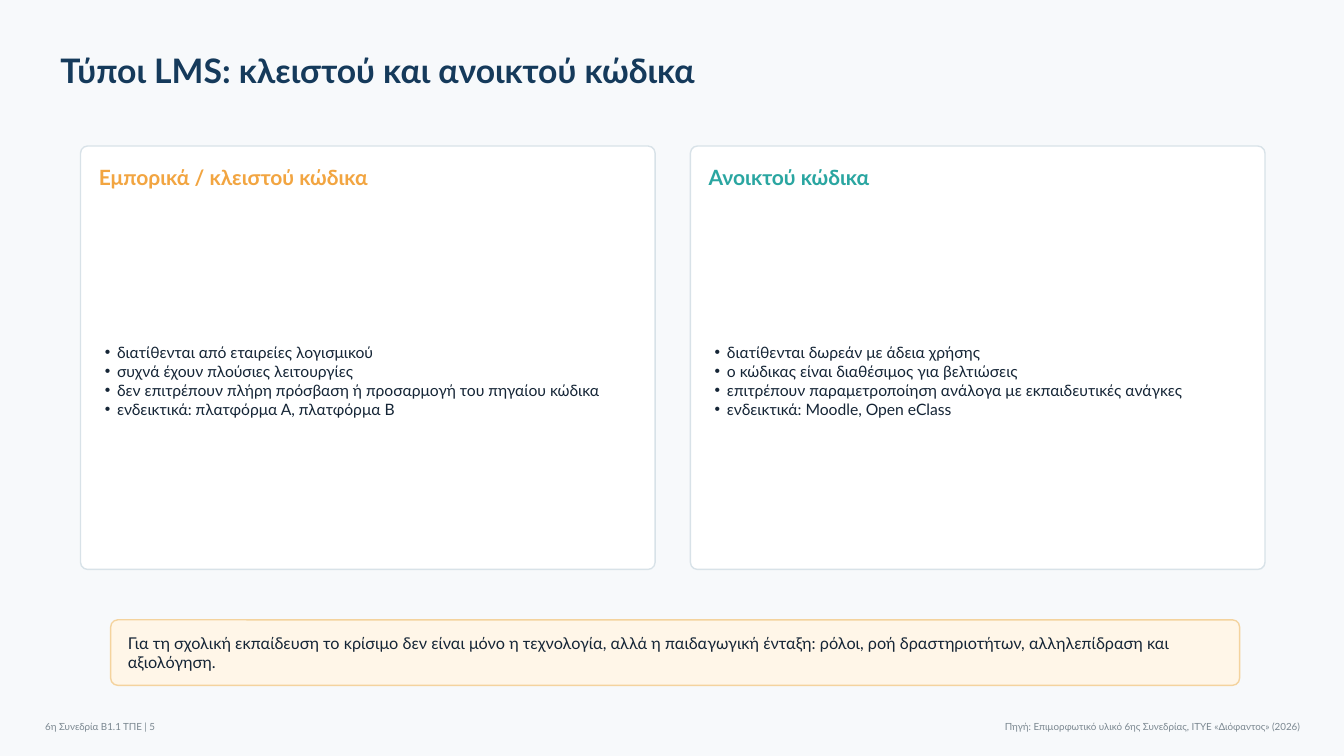
from dataclasses import dataclass

from lxml.etree import SubElement
from pptx import Presentation
from pptx.dml.color import RGBColor
from pptx.enum.shapes import MSO_SHAPE as Preset
from pptx.enum.text import MSO_ANCHOR as Anchor, MSO_AUTO_SIZE as AutoSize, PP_ALIGN as Align
from pptx.oxml.ns import qn
from pptx.util import Cm, Pt

# Content
TITLE = "Τύποι LMS: κλειστού και ανοικτού κώδικα"
CARDS = [
    ("Εμπορικά / κλειστού κώδικα", "F2A541", [
        "διατίθενται από εταιρείες λογισμικού",
        "συχνά έχουν πλούσιες λειτουργίες",
        "δεν επιτρέπουν πλήρη πρόσβαση ή προσαρμογή του πηγαίου κώδικα",
        "ενδεικτικά: πλατφόρμα Α, πλατφόρμα Β",
    ]),
    ("Ανοικτού κώδικα", "2AA6A1", [
        "διατίθενται δωρεάν με άδεια χρήσης",
        "ο κώδικας είναι διαθέσιμος για βελτιώσεις",
        "επιτρέπουν παραμετροποίηση ανάλογα με εκπαιδευτικές ανάγκες",
        "ενδεικτικά: Moodle, Open eClass",
    ]),
]
NOTE = ("Για τη σχολική εκπαίδευση το κρίσιμο δεν είναι μόνο η τεχνολογία, αλλά η "
        "παιδαγωγική ένταξη: ρόλοι, ροή δραστηριοτήτων, αλληλεπίδραση και αξιολόγηση.")
FOOTERS = [
    ("6η Συνεδρία Β1.1 ΤΠΕ | 5", 1.14, 19.05, Align.LEFT),
    ("Πηγή: Επιμορφωτικό υλικό 6ης Συνεδρίας, ΙΤΥΕ «Διόφαντος» (2026)", 20.57, 12.19, Align.RIGHT),
]


@dataclass(frozen=True)
class Theme:
    font: str = "Lato"
    background: str = "F7F9FB"
    navy: str = "153A5B"
    ink: str = "152536"
    muted: str = "7A8790"
    card_fill: str = "FFFFFF"
    card_line: str = "D8E2E8"
    note_fill: str = "FFF6E8"
    note_line: str = "F4D39E"
    title_size: float = 24.1
    heading_size: float = 15
    list_size: float = 11.2
    note_size: float = 11.6
    footer_size: float = 7


THEME = Theme()

# Layout in centimetres
CARD_LEFT, CARD_TOP, CARD_WIDTH, CARD_HEIGHT = 2.03, 3.68, 14.48, 10.67
CARD_STEP = 15.37
HEADING_INSET, HEADING_DROP, HEADING_HEIGHT = 0.46, 0.41, 0.76
LIST_INSET, LIST_DROP, LIST_HEIGHT = 0.61, 1.57, 8.69
BULLET_INDENT = 0.31
NOTE_BOX = (2.79, 15.62, 28.45, 1.65)
NOTE_INSET = 0.38
CORNER = 0.18


def place(shape, left, top, width, height):
    shape.left, shape.top, shape.width, shape.height = map(Cm, (left, top, width, height))


def write(shape, text, size, color, bold=False, align=Align.LEFT, bullets=False, inset=0):
    frame = shape.text_frame
    frame.text = text
    frame.word_wrap = True
    frame.auto_size = AutoSize.NONE
    frame.vertical_anchor = Anchor.MIDDLE
    frame.margin_left = frame.margin_right = Cm(inset)
    frame.margin_top = frame.margin_bottom = 0
    for paragraph in frame.paragraphs:
        paragraph.alignment = align
        paragraph.space_before = paragraph.space_after = Pt(0)
        if bullets:
            properties = paragraph._p.get_or_add_pPr()
            properties.set("marL", str(Cm(BULLET_INDENT)))
            properties.set("indent", str(-Cm(BULLET_INDENT)))
            SubElement(properties, qn("a:buChar")).set("char", "•")
        for run in paragraph.runs:
            font = run.font
            font.name, font.size, font.bold = THEME.font, Pt(size), bold
            font.color.rgb = RGBColor.from_string(color)


def add_panel(slide, box, fill, line):
    panel = slide.shapes.add_shape(Preset.ROUNDED_RECTANGLE, *map(Cm, box))
    panel.shadow.inherit = False
    panel.adjustments[0] = CORNER / box[3]
    panel.fill.solid()
    panel.fill.fore_color.rgb = RGBColor.from_string(fill)
    panel.line.color.rgb = RGBColor.from_string(line)
    panel.line.width = Pt(1)
    return panel


def main():
    presentation = Presentation()
    presentation.slide_width, presentation.slide_height = Cm(33.87), Cm(19.05)
    comparison_layout = presentation.slide_layouts[4]
    slide = presentation.slides.add_slide(comparison_layout)
    slide.background.fill.solid()
    slide.background.fill.fore_color.rgb = RGBColor.from_string(THEME.background)

    # Title
    title = slide.shapes.title
    place(title, 1.52, 1.07, 17.02, 1.4)
    write(title, TITLE, THEME.title_size, THEME.navy, bold=True)

    # Cards, kept behind the placeholders that carry their text
    for index, (heading_text, accent, items) in enumerate(CARDS):
        left = CARD_LEFT + index * CARD_STEP
        card = add_panel(slide, (left, CARD_TOP, CARD_WIDTH, CARD_HEIGHT),
                         THEME.card_fill, THEME.card_line)
        title.element.addprevious(card.element)

        heading = slide.placeholders[1 + 2 * index]
        place(heading, left + HEADING_INSET, CARD_TOP + HEADING_DROP,
              CARD_WIDTH - 2 * HEADING_INSET, HEADING_HEIGHT)
        write(heading, heading_text, THEME.heading_size, accent, bold=True)

        body = slide.placeholders[2 + 2 * index]
        place(body, left + LIST_INSET, CARD_TOP + LIST_DROP,
              CARD_WIDTH - 2 * LIST_INSET, LIST_HEIGHT)
        write(body, "\n".join(items), THEME.list_size, THEME.ink, bullets=True)

    # Note
    note = add_panel(slide, NOTE_BOX, THEME.note_fill, THEME.note_line)
    write(note, NOTE, THEME.note_size, THEME.ink, inset=NOTE_INSET)

    # Footers
    for text, left, width, align in FOOTERS:
        footer = slide.shapes.add_textbox(Cm(left), Cm(18.08), Cm(width), Cm(0.46))
        write(footer, text, THEME.footer_size, THEME.muted, align=align)

    presentation.save("out.pptx")


if __name__ == "__main__":
    main()
